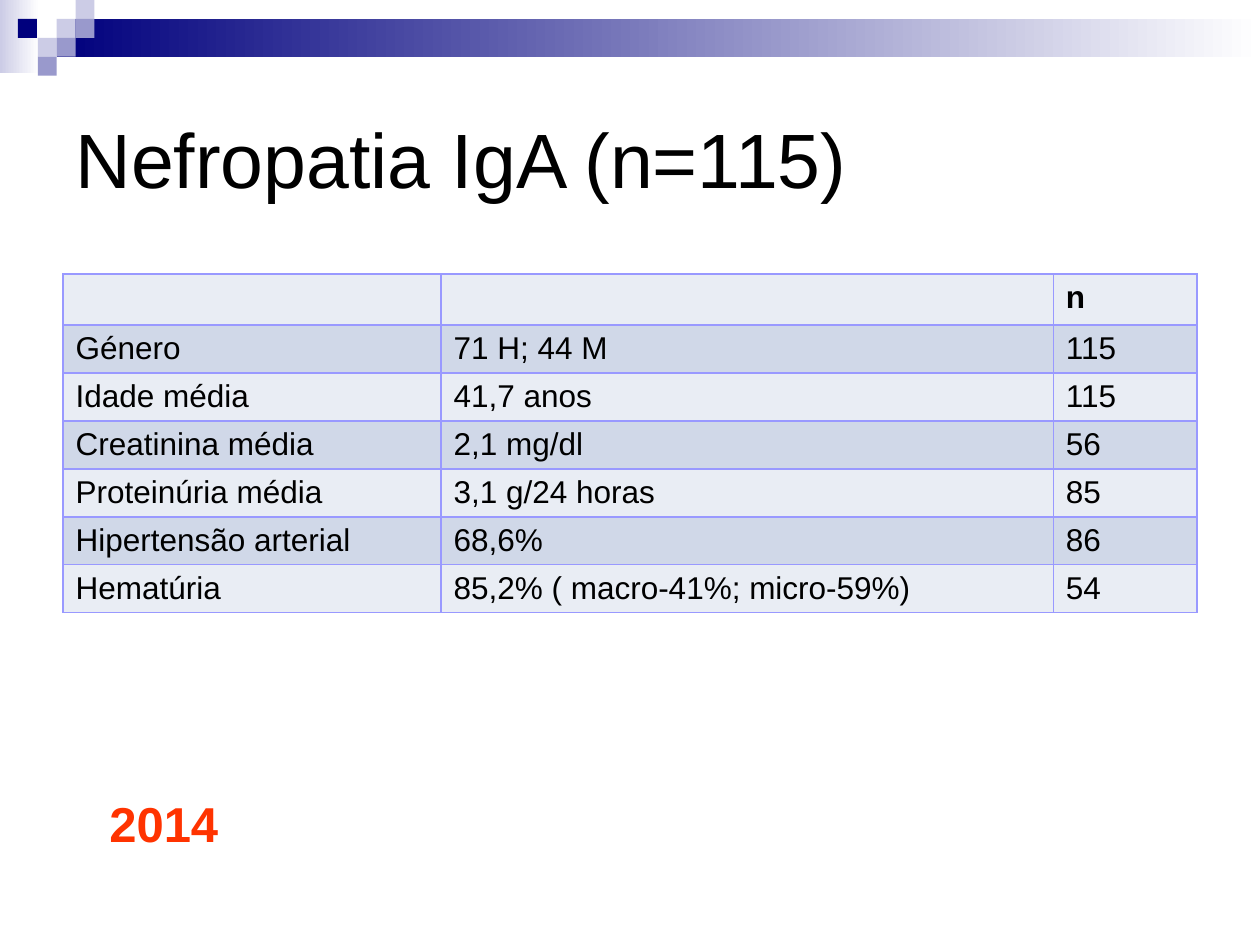
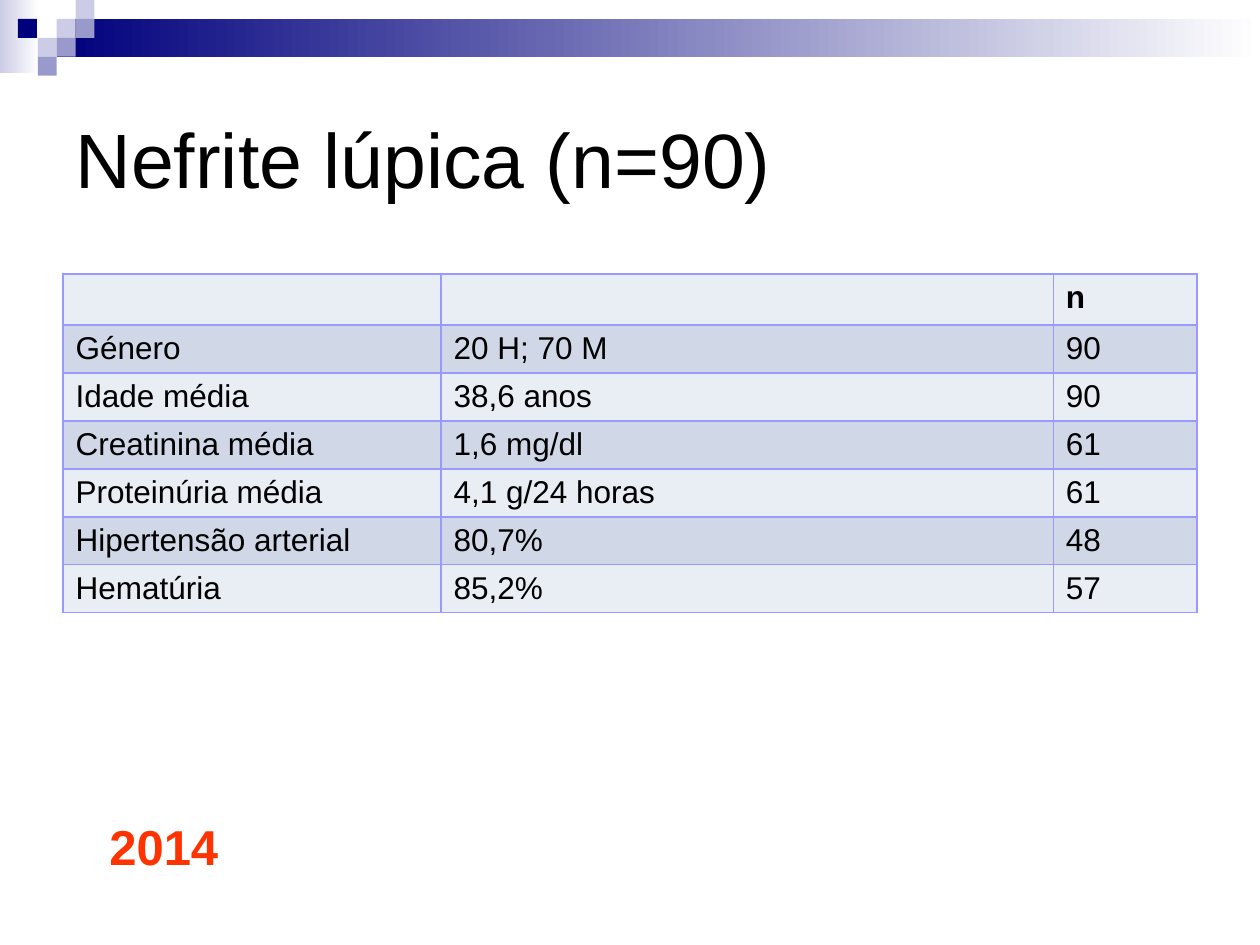
import pptx
import pptx.util
import pptx.dml.color
import pptx.enum.shapes
import pptx.enum.text
import pptx.oxml.ns
import lxml.etree

WIDE, HIGH = pptx.util.Inches(10), pptx.util.Inches(7.5)
STEP = pptx.util.Inches(0.15)
NAVY, LILAC, MAUVE, WHITE = "00007D", "CCCCE6", "9999CC", "FFFFFF"
BLACK, RED, EDGE = "000000", "FF3300", "9999FF"
ROWS = ["E9EDF4", "D0D8E8"]

BAND = [
    (0, 0, 2.07, 3.87, [LILAC, WHITE]),
    (3, 1, 63.67, 2, [NAVY, WHITE]),
    (3, 1, 1, 1, [LILAC]),
    (4, 0, 1, 1, [LILAC]),
    (4, 1, 1, 1, [MAUVE]),
    (2, 2, 1, 1, [LILAC]),
    (0.95, 1, 1, 1, [NAVY]),
    (3, 2, 1, 1, [MAUVE]),
    (2, 3, 1, 1, [MAUVE]),
]

LABELS = ["Género", "Idade média", "Creatinina média", "Proteinúria média",
          "Hipertensão arterial", "Hematúria"]
IGA = [("71 H; 44 M", "115"), ("41,7 anos", "115"), ("2,1 mg/dl", "56"),
       ("3,1 g/24 horas", "85"), ("68,6%", "86"),
       ("85,2% ( macro-41%; micro-59%)", "54")]
LUPUS = [("20 H; 70 M", "90"), ("38,6 anos", "90"), ("1,6 mg/dl", "61"),
         ("4,1 g/24 horas", "61"), ("80,7%", "48"), ("85,2%", "57")]


def color(code):
    return pptx.dml.color.RGBColor.from_string(code)


def place(left, top, width, height):
    return [int(WIDE * left), int(HIGH * top), int(WIDE * width), int(HIGH * height)]


def write(frame, text, size, code, bold=False, align=pptx.enum.text.PP_ALIGN.LEFT):
    frame.text = text
    line = frame.paragraphs[0]
    line.alignment = align
    for run in line.runs:
        run.font.name = "Arial"
        run.font.size = pptx.util.Pt(size)
        run.font.bold = bold
        run.font.color.rgb = color(code)


def block(slide, col, row, cols, rows, codes):
    spot = [int(STEP * part) for part in (col, row, cols, rows)]
    shape = slide.shapes.add_shape(pptx.enum.shapes.MSO_SHAPE.RECTANGLE, *spot)
    shape.shadow.inherit = False
    shape.line.fill.background()
    if len(codes) == 1:
        shape.fill.solid()
        shape.fill.fore_color.rgb = color(codes[0])
    else:
        shape.fill.gradient()
        shape.fill.gradient_angle = 0
        for stop, code in zip(shape.fill.gradient_stops, codes):
            stop.color.rgb = color(code)
    return shape


def style(layout, slide):
    title, *others = layout.placeholders
    for other in others:
        layout.shapes.element.remove(other.element)
    title.left, title.top, title.width, title.height = place(0.05, 1 / 15, 0.9, 0.2)
    for spec in BAND:
        title.element.addprevious(block(slide, *spec).element)


def border(cell):
    props = cell._tc.get_or_add_tcPr()
    tag = pptx.oxml.ns.qn
    for side in "LRTB":
        line = lxml.etree.SubElement(props, tag("a:ln" + side), w=str(pptx.util.Pt(1)))
        fill = lxml.etree.SubElement(line, tag("a:solidFill"))
        lxml.etree.SubElement(fill, tag("a:srgbClr"), val=EDGE)


def grid(slide, data):
    lines = [("", "", "n")] + [(name, *pair) for name, pair in zip(LABELS, data)]
    high = 0.38 / 7.5
    spot = place(0.05, 0.29, 0.9, high * len(lines))
    table = slide.shapes.add_table(len(lines), 3, *spot).table
    for col, share in zip(table.columns, (0.3, 0.486, 0.114)):
        col.width = int(WIDE * share)
    for row, line in enumerate(lines):
        for col, text in enumerate(line):
            cell = table.cell(row, col)
            border(cell)
            cell.fill.solid()
            cell.fill.fore_color.rgb = color(ROWS[row % 2])
            if text:
                write(cell.text_frame, text, 18, BLACK, bold=row == 0)


def year(slide, top):
    box = slide.shapes.add_textbox(*place(0.035, top, 0.19, 0.076))
    box.text_frame.word_wrap = True
    box.text_frame.auto_size = pptx.enum.text.MSO_AUTO_SIZE.SHAPE_TO_FIT_TEXT
    write(box.text_frame, "2014", 28, RED, True, pptx.enum.text.PP_ALIGN.CENTER)


def page(deck, layout, title, data, top):
    slide = deck.slides.add_slide(layout)
    if len(deck.slides) == 1:
        style(layout, slide)
    frame = slide.shapes.title.text_frame
    frame.vertical_anchor = pptx.enum.text.MSO_ANCHOR.MIDDLE
    write(frame, title, 44, BLACK)
    grid(slide, data)
    year(slide, top)


def main():
    deck = pptx.Presentation()
    deck.slide_width, deck.slide_height = WIDE, HIGH
    layout = deck.slide_layouts[5]
    page(deck, layout, "Nefropatia IgA (n=115)", IGA, 0.833)
    page(deck, layout, "Nefrite lúpica (n=90)", LUPUS, 0.857)
    deck.save("out.pptx")


if __name__ == "__main__":
    main()
